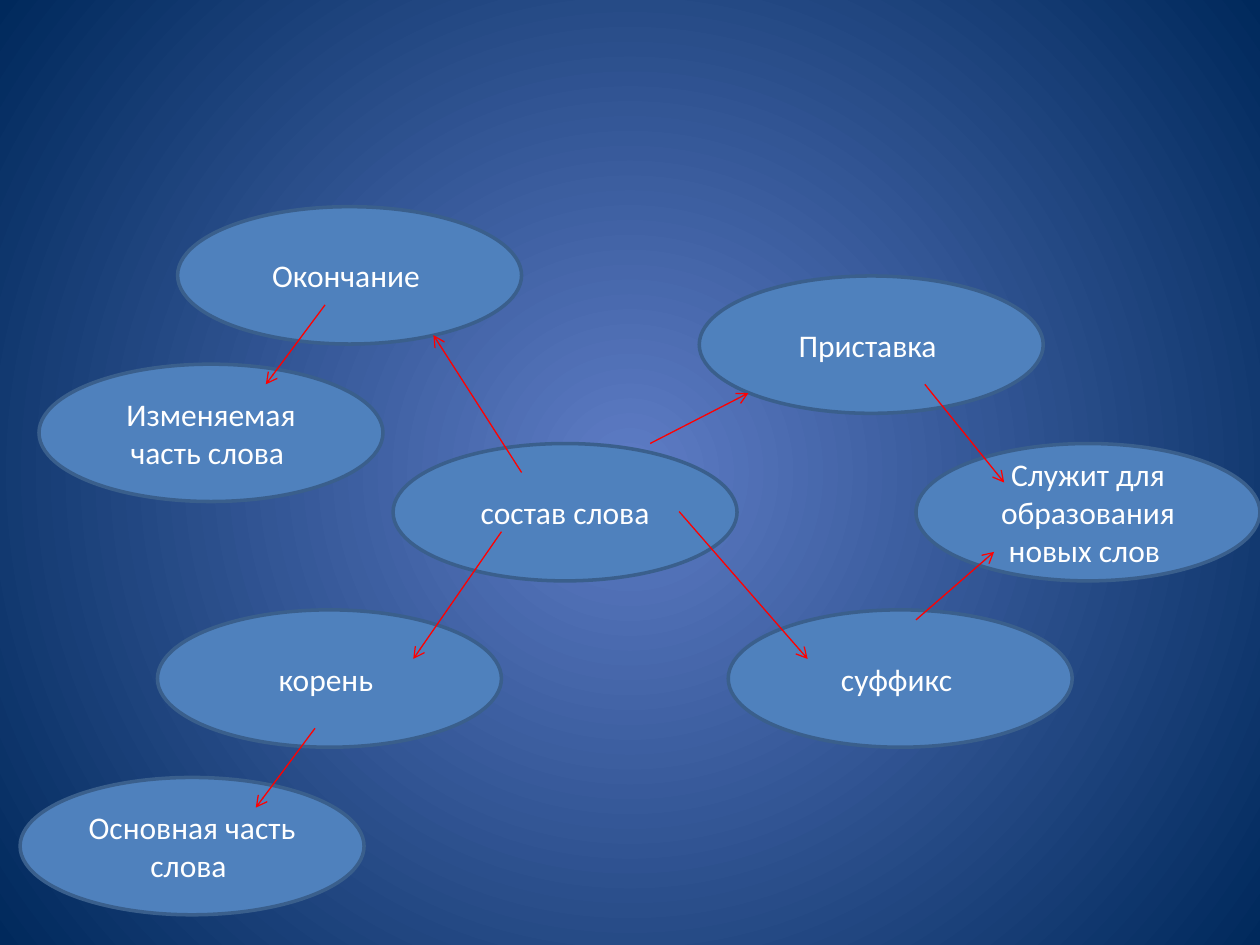
from lxml import etree
from pptx import Presentation
from pptx.dml.color import RGBColor
from pptx.enum.shapes import MSO_CONNECTOR, MSO_SHAPE
from pptx.enum.text import MSO_ANCHOR, PP_ALIGN
from pptx.oxml.ns import qn
from pptx.util import Inches, Pt

ELLIPSE = MSO_SHAPE.OVAL
STRAIGHT = MSO_CONNECTOR.STRAIGHT
CENTER = PP_ALIGN.CENTER
MIDDLE = MSO_ANCHOR.MIDDLE

GLOW = RGBColor(0x5E, 0x7C, 0xC5)
NAVY = RGBColor(0x00, 0x29, 0x5C)
BLUE = RGBColor(0x4F, 0x81, 0xBD)
OUTLINE = RGBColor(0x3A, 0x5F, 0x8C)
WHITE = RGBColor(0xFF, 0xFF, 0xFF)
RED = RGBColor(0xFF, 0x00, 0x00)

NODE_WIDTH, NODE_HEIGHT = 2.73, 1.09
NODES = [
    (" состав слова ", 3.12, 3.52),
    ("Приставка ", 5.55, 2.19),
    ("суффикс ", 5.78, 4.84),
    ("Служит для образования новых слов ", 7.27, 3.52),
    ("Изменяемая часть слова ", 0.31, 2.89),
    ("Окончание ", 1.41, 1.64),
    ("корень ", 1.25, 4.84),
    ("Основная часть слова ", 0.16, 6.17),
]
ARROWS = [
    ((5.16, 3.52), (5.94, 3.12)),
    ((4.14, 3.75), (3.44, 2.66)),
    ((3.98, 4.22), (3.28, 5.23)),
    ((5.39, 4.06), (6.41, 5.23)),
    ((7.34, 3.05), (7.97, 3.83)),
    ((7.27, 4.92), (7.89, 4.38)),
    ((2.58, 2.42), (2.11, 3.05)),
    ((2.5, 5.78), (2.03, 6.41)),
]


def paint_background(page):
    """Fill the page with a circular gradient from its centre."""
    fill = page.background.fill
    fill.gradient()
    for stop, color, position in zip(fill.gradient_stops, (GLOW, NAVY), (0, 1)):
        stop.color.rgb = color
        stop.position = position
    gradient = next(page.element.iter(qn("a:gradFill")))
    for linear in gradient.findall(qn("a:lin")):
        gradient.remove(linear)
    circle = etree.SubElement(gradient, qn("a:path"), path="circle")
    sides = dict.fromkeys("ltrb", "50000")
    etree.SubElement(circle, qn("a:fillToRect"), **sides)


def write_text(frame, text, *, size, color, font):
    """Write one centred paragraph in the frame."""
    frame.word_wrap = True
    frame.vertical_anchor = MIDDLE
    para = frame.paragraphs[0]
    para.alignment = CENTER
    span = para.add_run()
    span.text = text
    span.font.size = Pt(size)
    span.font.name = font
    span.font.color.rgb = color


def add_node(page, text, left, top):
    """Add a labelled ellipse of the diagram."""
    node = page.shapes.add_shape(
        ELLIPSE, Inches(left), Inches(top), Inches(NODE_WIDTH), Inches(NODE_HEIGHT)
    )
    node.shadow.inherit = False
    node.fill.solid()
    node.fill.fore_color.rgb = BLUE
    node.line.color.rgb = OUTLINE
    node.line.width = Pt(2)
    write_text(node.text_frame, text, size=18, color=WHITE, font="Calibri")


def add_arrow(page, start, end):
    """Add a thin red arrow between two points."""
    points = [Inches(value) for value in start + end]
    arrow = page.shapes.add_connector(STRAIGHT, *points)
    arrow.line.color.rgb = RED
    arrow.line.width = Pt(0.75)
    etree.SubElement(arrow.line._get_or_add_ln(), qn("a:tailEnd"), type="arrow")
    etree.SubElement(arrow.element.spPr, qn("a:effectLst"))


def build_word_map(page):
    """Place the ellipses and the arrows that join them."""
    for text, left, top in NODES:
        add_node(page, text, left, top)
    for start, end in ARROWS:
        add_arrow(page, start, end)


def main():
    """Build and save the deck."""
    deck = Presentation()
    deck.slide_width, deck.slide_height = Inches(10), Inches(7.5)
    page = deck.slides.add_slide(deck.slide_layouts[6])
    paint_background(page)
    build_word_map(page)
    deck.save("out.pptx")


if __name__ == "__main__":
    main()
